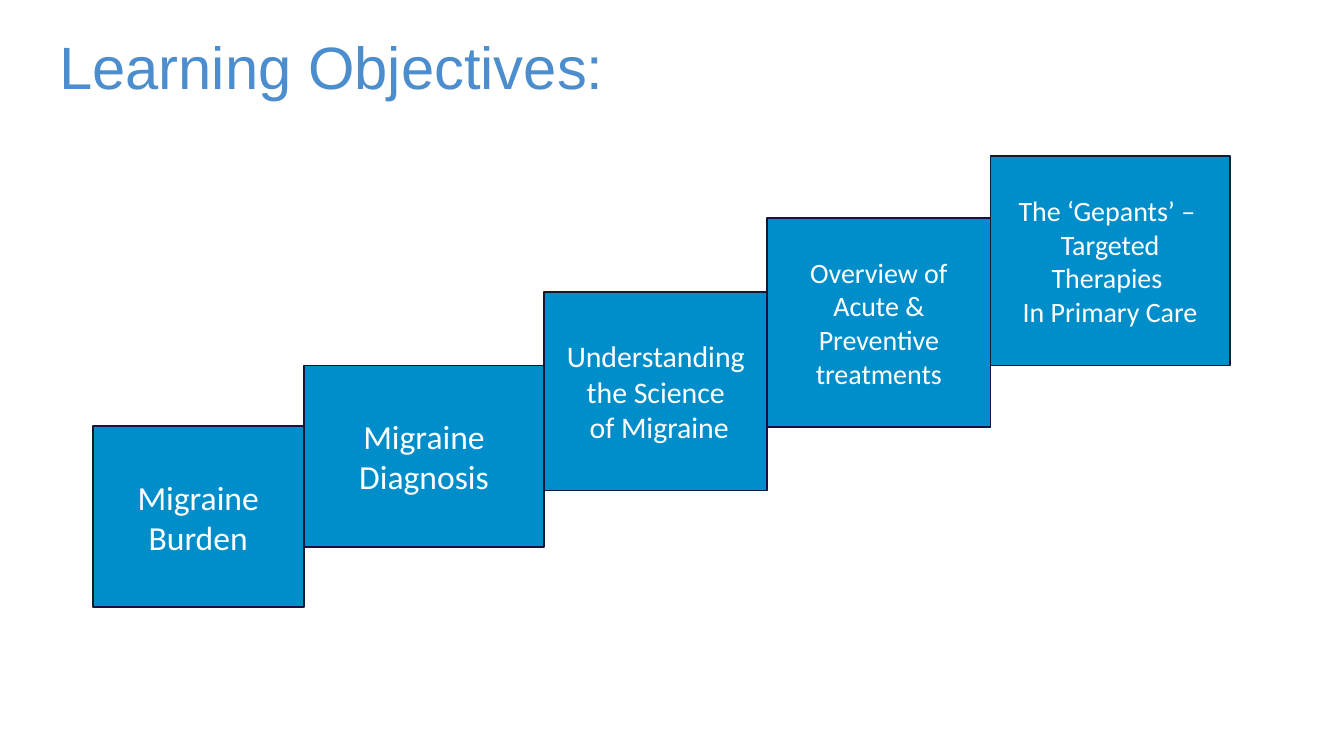
from dataclasses import dataclass

from lxml.etree import SubElement
from pptx import Presentation
from pptx.dml.color import RGBColor
from pptx.enum.shapes import MSO_SHAPE
from pptx.enum.text import MSO_ANCHOR, MSO_AUTO_SIZE, PP_ALIGN
from pptx.oxml.ns import qn
from pptx.util import Inches, Pt


@dataclass(frozen=True)
class Theme:
    title: RGBColor = RGBColor(0x00, 0x5E, 0xB8)
    fill: RGBColor = RGBColor(0x00, 0x8E, 0xCA)
    edge: RGBColor = RGBColor(0x0E, 0x1A, 0x32)
    text: RGBColor = RGBColor(0xFF, 0xFF, 0xFF)
    head: str = "Arial"
    body: str = "Calibri"
    big: int = 32
    large: int = 18
    mid: int = 16
    small: int = 15


THEME = Theme()
RECT, FLOW = MSO_SHAPE.RECTANGLE, MSO_SHAPE.FLOWCHART_PROCESS

# Shape, drop below the top of the stairs, width, height, type size, lines
STEPS = [
    (RECT, 2.01, 1.57, 1.35, THEME.large, ["Migraine Burden"]),
    (RECT, 1.56, 1.79, 1.35, THEME.large, ["Migraine Diagnosis"]),
    (FLOW, 1.01, 1.66, 1.48, THEME.mid,
     ["Understanding the Science", " of Migraine"]),
    (FLOW, 0.46, 1.66, 1.56, THEME.small,
     ["Overview of Acute &", "Preventive treatments"]),
    (FLOW, 0, 1.78, 1.56, THEME.small,
     ["The ‘Gepants’ – ", "Targeted Therapies ", "In Primary Care"]),
]


def style(para, face, size, color, align):
    para.alignment = align
    font = para.font
    font.name, font.size = face, Pt(size)
    font.color.rgb = color


def add_title(slide, text, left, top, width, height):
    title = slide.shapes.title
    title.left, title.top = Inches(left), Inches(top)
    title.width, title.height = Inches(width), Inches(height)
    frame = title.text_frame
    frame.text = text
    frame.auto_size = MSO_AUTO_SIZE.NONE
    frame.vertical_anchor = MSO_ANCHOR.MIDDLE
    frame.margin_left = frame.margin_right = 0
    frame.margin_top = frame.margin_bottom = 0
    para = frame.paragraphs[0]
    para.line_spacing = 0.9
    style(para, THEME.head, THEME.big, THEME.title, PP_ALIGN.LEFT)
    color = next(title.element.iter(qn("a:srgbClr")))
    SubElement(color, qn("a:alpha"), val="70000")


def add_step(slide, kind, left, top, width, height, size, lines):
    step = slide.shapes.add_shape(
        kind, Inches(left), Inches(top), Inches(width), Inches(height))
    step.shadow.inherit = False
    step.fill.solid()
    step.fill.fore_color.rgb = THEME.fill
    step.line.color.rgb = THEME.edge
    step.line.width = Pt(1)
    frame = step.text_frame
    frame.word_wrap = True
    frame.vertical_anchor = MSO_ANCHOR.MIDDLE
    frame.text = "\n".join(lines)
    for para in frame.paragraphs:
        style(para, THEME.body, size, THEME.text, PP_ALIGN.CENTER)


def add_stairs(slide, left, top):
    """Set the steps side by side, each starting where the last one ends."""
    for kind, drop, width, height, size, lines in STEPS:
        add_step(slide, kind, left, top + drop, width, height, size, lines)
        left += width


def main():
    deck = Presentation()
    deck.slide_width = Inches(10)
    deck.slide_height = deck.slide_width * 9 // 16
    slide = deck.slides.add_slide(deck.slide_layouts.get_by_name("Title Only"))
    add_title(slide, "Learning Objectives:", 0.44, 0.23, 5.36, 0.59)
    add_stairs(slide, 0.69, 1.16)
    deck.save("out.pptx")


if __name__ == "__main__":
    main()
